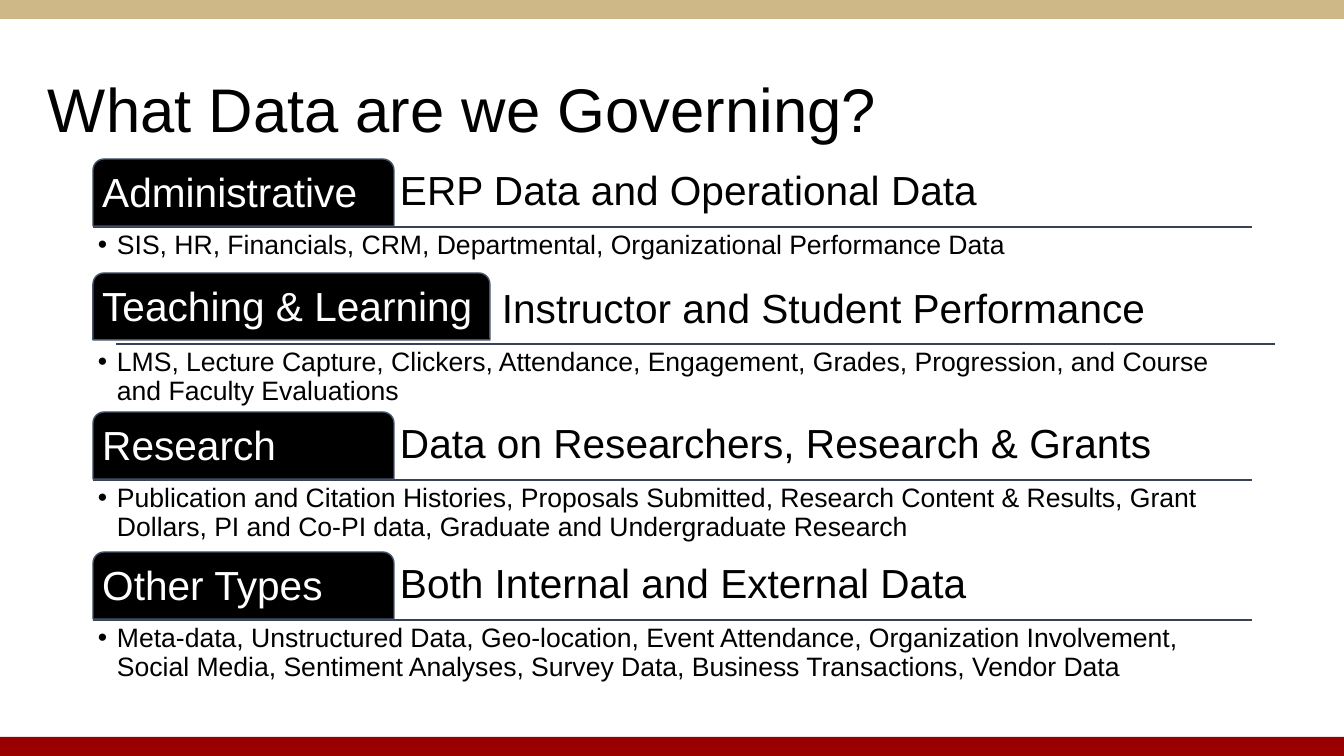
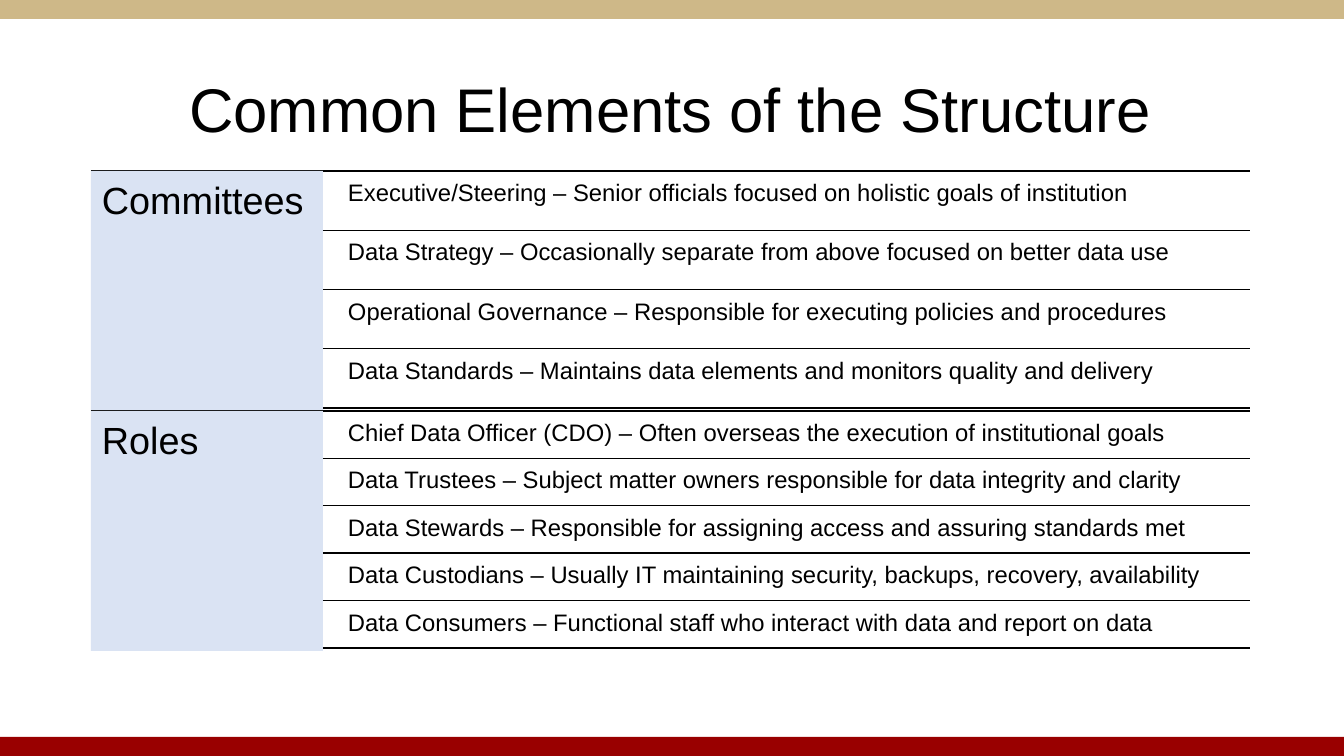
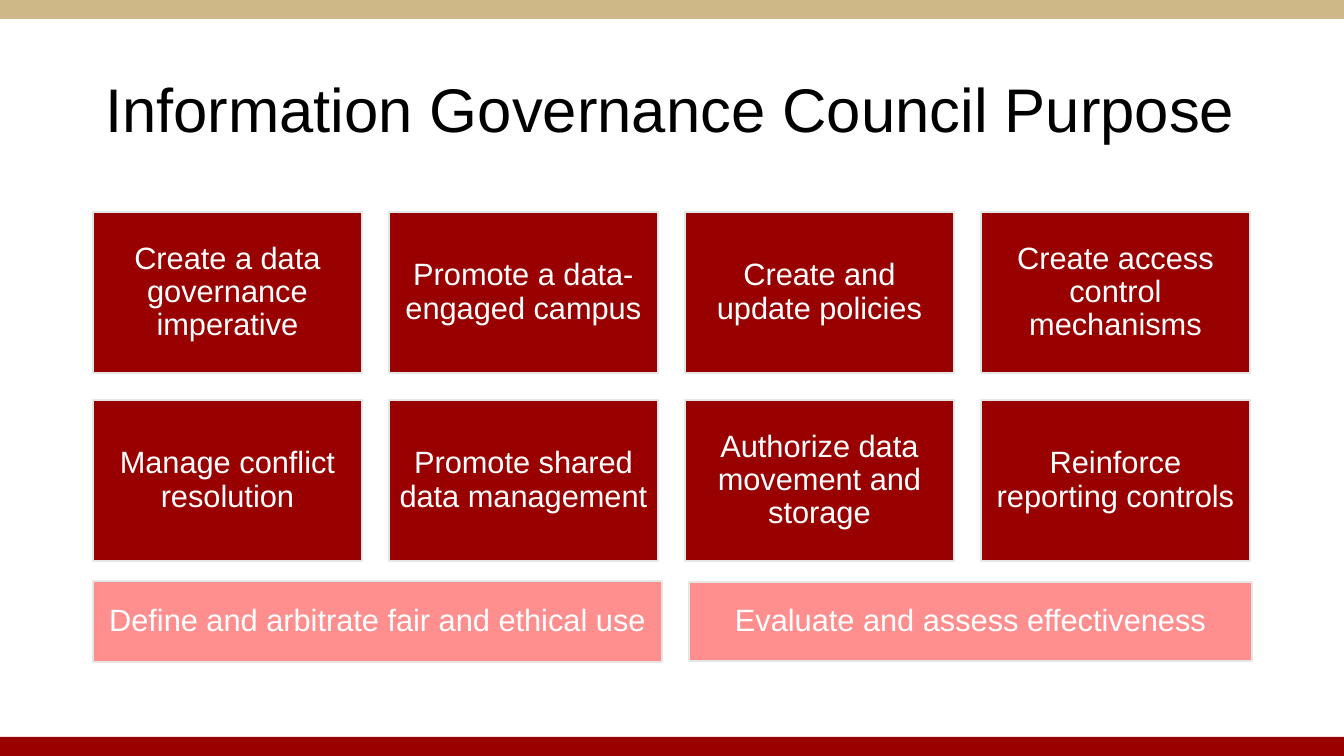
import pptx
import pptx.util
import pptx.dml.color
import pptx.enum.shapes
import pptx.enum.text
import pptx.oxml.ns
import lxml.etree

PX = 12192000 / 1344
BLACK, WHITE, RED, GOLD = "000000", "FFFFFF", "990000", "CEB888"
PINK, PALE, GREY, SLATE, NAVY = "FF8F8F", "DAE3F3", "E7E6E6", "44546A", "364355"
KIND = pptx.enum.shapes.MSO_SHAPE
LEFT, MID = pptx.enum.text.PP_ALIGN.LEFT, pptx.enum.text.PP_ALIGN.CENTER
HIGH, HALF = pptx.enum.text.MSO_ANCHOR.TOP, pptx.enum.text.MSO_ANCHOR.MIDDLE
hue = pptx.dml.color.RGBColor.from_string
qn = pptx.oxml.ns.qn


def box(page, area, text="", size=18, ink=BLACK, fill=None, edge=None,
        align=LEFT, anchor=HALF, inset=(6, 6), kind=None, bullet=False):
    spot = [round(n * PX) for n in area]
    if fill:
        shape = page.shapes.add_shape(kind or KIND.RECTANGLE, *spot)
        shape.shadow.inherit = False
        shape.fill.solid()
        shape.fill.fore_color.rgb = hue(fill)
        if edge:
            shape.line.color.rgb = hue(edge)
            shape.line.width = pptx.util.Pt(1)
        else:
            shape.line.fill.background()
    else:
        shape = page.shapes.add_textbox(*spot)
    if text:
        frame = shape.text_frame
        frame.text = text
        frame.word_wrap = True
        frame.vertical_anchor = anchor
        frame.margin_left = frame.margin_right = round(inset[0] * PX)
        frame.margin_top = frame.margin_bottom = round(inset[1] * PX)
        para = frame.paragraphs[0]
        para.alignment = align
        para.line_spacing = 0.9
        if bullet:
            props = para._p.get_or_add_pPr()
            props.set("marL", str(round(19 * PX)))
            props.set("indent", str(round(-19 * PX)))
            lxml.etree.SubElement(props, qn("a:buFont")).set("typeface", "Arial")
            lxml.etree.SubElement(props, qn("a:buChar")).set("char", "•")
        font = para.runs[0].font
        font.name = "Arial"
        font.size = pptx.util.Pt(size)
        font.color.rgb = hue(ink)
    return shape


def rule(page, start, end, y, ink):
    line = page.shapes.add_connector(
        pptx.enum.shapes.MSO_CONNECTOR.STRAIGHT,
        *[round(n * PX) for n in (start, y, end, y)])
    line.line.color.rgb = hue(ink)
    line.line.width = pptx.util.Pt(1)
    lxml.etree.SubElement(line._element.spPr, qn("a:effectLst"))


deck = pptx.Presentation()
deck.slide_width = round(1344 * PX)
deck.slide_height = round(756 * PX)

pages = []
for title, align in [
    ("What Data are we Governing?", LEFT),
    ("Common Elements of the Structure", MID),
    ("Information Governance Council Purpose", MID),
]:
    page = deck.slides.add_slide(deck.slide_layouts[6])
    box(page, (0, 737, 1344, 19), fill=RED)
    box(page, (0, 0, 1344, 19), fill=GOLD)
    box(page, (38, 40, 1265, 146), title, 44, align=align, inset=(10, 5))
    pages.append(page)
data, parts, goals = pages

for top, wide, name, spot, head, start, base, note in [
    (159, 301, "Administrative", (394, 159), "ERP Data and Operational Data", 93, 227,
     "SIS, HR, Financials, CRM, Departmental, Organizational Performance Data"),
    (273, 397, "Teaching & Learning", (496, 277), "Instructor and Student Performance", 116, 344,
     "LMS, Lecture Capture, Clickers, Attendance, Engagement, Grades, Progression, "
     "and Course and Faculty Evaluations"),
    (412, 301, "Research", (394, 412), "Data on Researchers, Research & Grants", 93, 480,
     "Publication and Citation Histories, Proposals Submitted, Research Content & Results, "
     "Grant Dollars, PI and Co-PI data, Graduate and Undergraduate Research"),
    (552, 301, "Other Types", (394, 552), "Both Internal and External Data", 93, 620,
     "Meta-data, Unstructured Data, Geo-location, Event Attendance, Organization Involvement, "
     "Social Media, Sentiment Analyses, Survey Data, Business Transactions, Vendor Data"),
]:
    rule(data, start, start + 1159, base, NAVY)
    box(data, (*spot, 1252 - spot[0], 67), head, 29)
    box(data, (93, top, wide, 67), name, 29, WHITE, BLACK, SLATE,
        kind=KIND.ROUND_2_SAME_RECTANGLE)
    box(data, (93, base, 1159, 68), note, 19, anchor=HIGH, inset=(5, 5), bullet=True)

tall, gap = 240, 3
for top, name, items in [
    (171, "Committees", [
        "Executive/Steering – Senior officials focused on holistic goals of institution",
        "Data Strategy – Occasionally separate from above focused on better data use",
        "Operational Governance – Responsible for executing policies and procedures",
        "Data Standards – Maintains data elements and monitors quality and delivery",
    ]),
    (411, "Roles", [
        "Chief Data Officer (CDO) – Often overseas the execution of institutional goals",
        "Data Trustees – Subject matter owners responsible for data integrity and clarity",
        "Data Stewards – Responsible for assigning access and assuring standards met",
        "Data Custodians – Usually IT maintaining security, backups, recovery, availability",
        "Data Consumers – Functional staff who interact with data and report on data",
    ]),
]:
    rule(parts, 91, 1250, top, BLACK)
    box(parts, (91, top, 232, tall), name, 27, fill=PALE, anchor=HIGH, inset=(11, 11))
    step = (tall - gap) / len(items)
    for i, item in enumerate(items):
        y = top + i * step
        box(parts, (341, y + gap, 910, step - gap), item, 17, anchor=HIGH, inset=(7, 7))
        rule(parts, 323, 1250, y + step, BLACK)

tiles = [
    "Create a data governance imperative", "Promote a data-engaged campus",
    "Create and update policies", "Create access control mechanisms",
    "Manage conflict resolution", "Promote shared data management",
    "Authorize data movement and storage", "Reinforce reporting controls",
]
cells = [((93 + i % 4 * 296, 212 + i // 4 * 188, 269, 161), text, RED)
         for i, text in enumerate(tiles)]
cells += [((93, 581, 569, 81), "Define and arbitrate fair and ethical use", PINK),
          ((689, 582, 563, 79), "Evaluate and assess effectiveness", PINK)]
for area, text, fill in cells:
    box(goals, area, text, 22, WHITE, fill, GREY, MID, inset=(9, 9))

deck.save("out.pptx")
